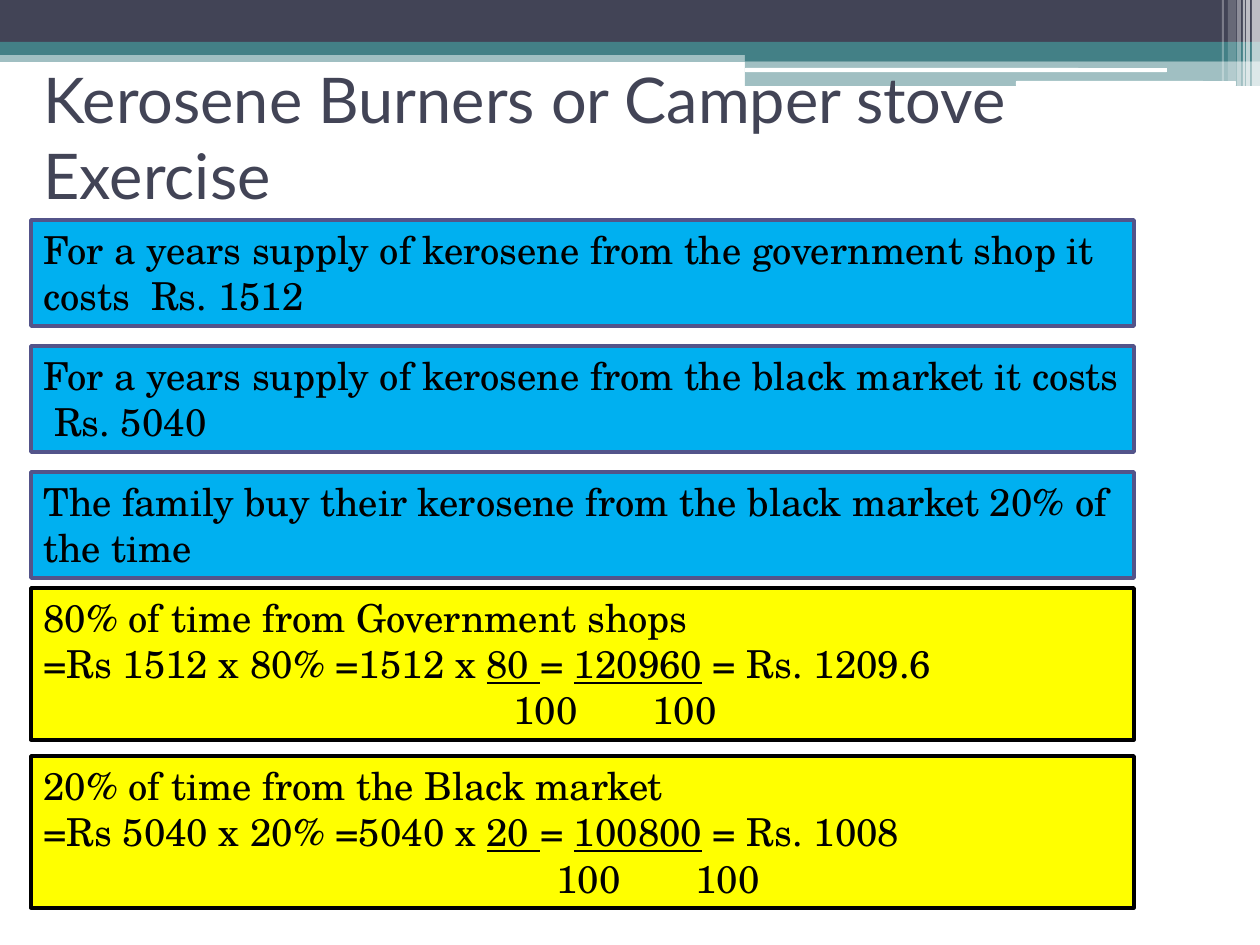
import pptx
import pptx.util
import pptx.dml.color
import pptx.enum.shapes
import pptx.enum.text
import pptx.oxml.ns
from lxml import etree

PX = 914400 // 126
SHAPE = pptx.enum.shapes.MSO_SHAPE
ANCHOR = pptx.enum.text.MSO_ANCHOR
ALIGN = pptx.enum.text.PP_ALIGN
qn = pptx.oxml.ns.qn

NAVY, TEAL, WHITE, BLACK = "424456", "438086", "FFFFFF", "000000"
BLUE, YELLOW, PURPLE = "00B0F0", "FFFF00", "53548A"

# left, top, width, height, colour, opacity in percent
BANDS = [
    (0, 50, 1260, 12, TEAL, 50),
    (0, 0, 1260, 42, NAVY, 100),
    (0, 42, 1260, 13, TEAL, 100),
    (745, 49, 515, 12, TEAL, 100),
    (745, 61, 515, 25, TEAL, 50),
]
HIGHLIGHTS = [(745, 68, 422, 4), (1016, 81, 220, 5)]
# left, width, height, opacity in percent
STRIPES = [(1252, 8, 86, 65), (1246, 4, 86, 65), (1243, 2, 86, 60),
           (1237, 4, 86, 40), (1228, 8, 81, 20), (1222, 2, 81, 30)]

FACTS = [
    "For a years supply of kerosene from the government shop it costs  Rs. 1512",
    "For a years supply of kerosene from the black market it costs  Rs. 5040",
    "The family buy their kerosene from the black market 20% of the time",
]
# top, heading, (text, underlined) parts, tab stops of the denominators
SUMS = [
    (588, "80% of time from Government shops",
     [("=Rs 1512 x 80% =1512 x ", False), ("80 ", True), ("= ", False),
      ("120960", True), (" = Rs. 1209.6", False)], (470, 609)),
    (756, "20% of time from the Black market",
     [("=Rs 5040 x 20% =5040 x ", False), ("20 ", True), ("= ", False),
      ("100800", True), (" = Rs. 1008", False)], (513, 652)),
]


def rgb(color):
    return pptx.dml.color.RGBColor.from_string(color)


def place(sp, left, top, width, height):
    sp.left, sp.top, sp.width, sp.height = (
        v * PX for v in (left, top, width, height))


def add_block(s, box, color, opacity=100, kind=SHAPE.RECTANGLE):
    sp = s.shapes.add_shape(kind, *(v * PX for v in box))
    sp.shadow.inherit = False
    sp.line.fill.background()
    sp.fill.solid()
    sp.fill.fore_color.rgb = rgb(color)
    if opacity < 100:
        clr = sp.fill._xPr.find(qn("a:solidFill"))[0]
        etree.SubElement(clr, qn("a:alpha"), val=str(opacity * 1000))
    return sp


def format_run(r, font, size, color):
    r.font.name = font
    r.font.size = pptx.util.Pt(size)
    r.font.color.rgb = rgb(color)


def add_panel(s, top, height, fill, border, lines):
    """Bordered box; each line is a list of (text, underlined) parts."""
    sp = add_block(s, (31, top, 1103, height), fill)
    sp.line.color.rgb = rgb(border)
    sp.line.width = pptx.util.Pt(2)
    tf = sp.text_frame
    tf.word_wrap = True
    tf.vertical_anchor = ANCHOR.TOP
    for i, parts in enumerate(lines):
        p = tf.paragraphs[0] if i == 0 else tf.add_paragraph()
        p.alignment = ALIGN.LEFT
        for text, underlined in parts:
            r = p.add_run()
            r.text = text
            format_run(r, "TeX Gyre Schola", 22, BLACK)
            if underlined:
                r.font.underline = True
    return sp


def set_tabs(p, stops):
    tabs = etree.SubElement(p._p.get_or_add_pPr(), qn("a:tabLst"))
    for stop in stops:
        etree.SubElement(tabs, qn("a:tab"), pos=str(stop * PX), algn="l")


def add_title(s, text):
    sp = s.shapes.title
    place(sp, 31, 63, 1134, 147)
    tf = sp.text_frame
    tf.text = text
    tf.word_wrap = True
    tf.vertical_anchor = ANCHOR.MIDDLE
    p = tf.paragraphs[0]
    p.alignment = ALIGN.LEFT
    format_run(p.runs[0], "Lato", 36, NAVY)


def main():
    prs = pptx.Presentation()
    prs.slide_width = pptx.util.Inches(10)
    prs.slide_height = pptx.util.Inches(7.5)
    s = prs.slides.add_slide(prs.slide_layouts[5])

    # Header decoration
    for *box, color, opacity in BANDS:
        add_block(s, box, color, opacity)
    for box in HIGHLIGHTS:
        add_block(s, box, WHITE, kind=SHAPE.ROUNDED_RECTANGLE)
    for left, width, height, opacity in STRIPES:
        add_block(s, (left, 0, width, height), WHITE, opacity)

    # Title, brought in front of the header
    add_title(s, "Kerosene Burners or Camper stove Exercise")
    s.shapes._spTree.append(s.shapes.title._element)

    # Given facts
    for i, fact in enumerate(FACTS):
        add_panel(s, 220 + 126 * i, 106, BLUE, PURPLE, [[(fact, False)]])

    # Worked sums, denominators aligned by tabs
    for top, heading, parts, stops in SUMS:
        sp = add_panel(s, top, 152, YELLOW, BLACK,
                       [[(heading, False)], parts, [("\t100\t100", False)]])
        set_tabs(sp.text_frame.paragraphs[2], stops)

    prs.save("out.pptx")


if __name__ == "__main__":
    main()
